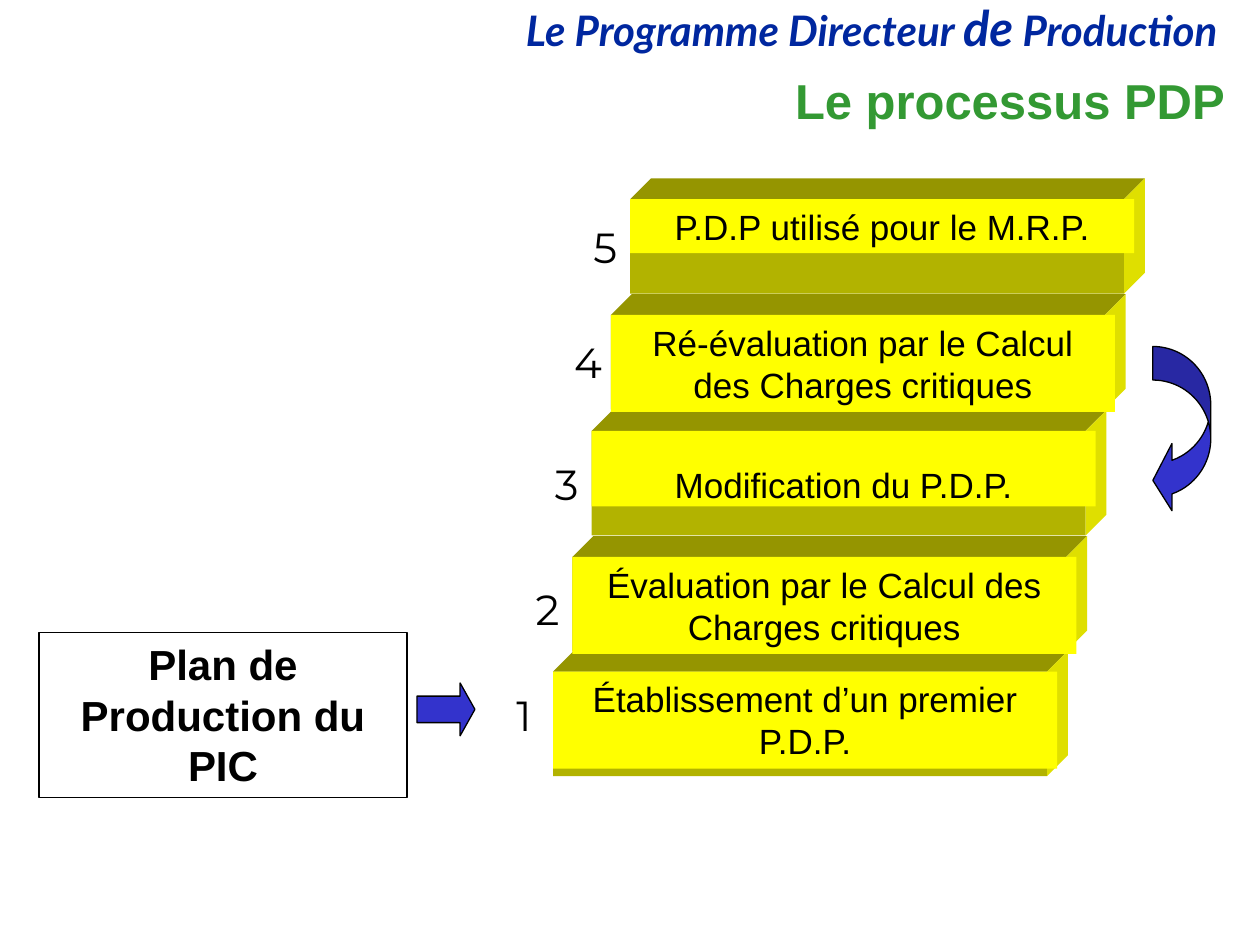
from dataclasses import dataclass

from pptx import Presentation
from pptx.dml.color import RGBColor
from pptx.enum.shapes import MSO_SHAPE
from pptx.enum.text import MSO_ANCHOR, MSO_AUTO_SIZE, PP_ALIGN
from pptx.util import Inches, Pt


@dataclass(frozen=True)
class Theme:
    """Colours, fonts and type sizes of the slide."""
    ink: str = "000000"
    navy: str = "00279F"
    green: str = "339933"
    arrow: str = "3333CC"
    panel: str = "FFFF00"
    front: str = "B2B300"
    top: str = "959500"
    side: str = "DFDF00"
    body_font: str = "Arial"
    header_font: str = "Lato"
    number_font: str = "Montserrat"
    title_size: int = 28
    label_size: int = 24
    step_size: int = 20


THEME = Theme()
COLUMNS, ROWS = 100, 75
WIDTH, HEIGHT = Inches(10), Inches(7.5)
FIRST_COLUMN, STEP_SHIFT = 43.9, 1.53
BLOCK_WIDTH, PANEL_WIDTH, DEPTH = 39.2, 40, 1.65
NUMBER_SHIFT = 3.9

STEPS = [
    ("Établissement d’un premier P.D.P.", 53.3, 8.3, 7.7, 54.2),
    ("Évaluation par le Calcul des Charges critiques", 44.2, 7.5, 7.7, 45.8),
    ("Modification du P.D.P.", 34.2, 8.3, 6, 35.9),
    ("Ré-évaluation par le Calcul des Charges critiques", 25, 7.5, 7.7, 26.2),
    ("P.D.P utilisé pour le M.R.P.", 15.8, 7.5, 4.3, 17.1),
]


def grid(column, row):
    """Turn a grid position into slide lengths."""
    return round(column * WIDTH / COLUMNS), round(row * HEIGHT / ROWS)


def area(column, row, columns, rows):
    """Turn a grid area into left, top, width and height."""
    return *grid(column, row), *grid(columns, rows)


def paint(shape, fill=None, line=None):
    """Set the fill and outline of a shape and drop its shadow."""
    shape.shadow.inherit = False
    if fill:
        shape.fill.solid()
        shape.fill.fore_color.rgb = RGBColor.from_string(fill)
    else:
        shape.fill.background()
    if line:
        shape.line.color.rgb = RGBColor.from_string(line)
        shape.line.width = Pt(0.75)
    else:
        shape.line.fill.background()


def add_shape(page, kind, place, fill=None, line=None, adjustments=()):
    """Add a painted preset shape."""
    shape = page.shapes.add_shape(kind, *area(*place))
    paint(shape, fill, line)
    for index, value in enumerate(adjustments):
        shape.adjustments[index] = value
    return shape


def add_face(page, corners, fill):
    """Add a closed polygon through grid corners."""
    first, *others = [grid(*corner) for corner in corners]
    builder = page.shapes.build_freeform(*first, scale=1.0)
    builder.add_line_segments(others, close=True)
    paint(builder.convert_to_shape(), fill)


def write(box, spans, font, color, align=PP_ALIGN.CENTER, anchor=MSO_ANCHOR.TOP,
          bold=None, italic=None, spacing=None):
    """Write one paragraph of (text, size) spans into a shape."""
    frame = box.text_frame
    frame.word_wrap = True
    frame.auto_size = MSO_AUTO_SIZE.NONE
    frame.vertical_anchor = anchor
    para = frame.paragraphs[0]
    para.alignment = align
    if spacing:
        para.line_spacing = spacing
    for text, size in spans:
        span = para.add_run()
        span.text = text
        span.font.name = font
        span.font.size = Pt(size)
        span.font.bold = bold
        span.font.italic = italic
        span.font.color.rgb = RGBColor.from_string(color)


def add_block(page, column, row, rows):
    """Add a solid block with a front, a top and a right side."""
    right, bottom = column + BLOCK_WIDTH, row + rows
    back_right, back_row = right + DEPTH, row - DEPTH
    add_shape(page, MSO_SHAPE.RECTANGLE, (column, row, BLOCK_WIDTH, rows), THEME.front)
    add_face(page, [(column, row), (column + DEPTH, back_row),
                    (back_right, back_row), (right, row)], THEME.top)
    add_face(page, [(right, row), (back_right, back_row),
                    (back_right, bottom - DEPTH), (right, bottom)], THEME.side)


def add_step(page, index, text, row, block_rows, panel_rows, number_row):
    """Add one numbered step of the staircase."""
    column = FIRST_COLUMN + index * STEP_SHIFT
    add_block(page, column, row, block_rows)
    panel = add_shape(page, MSO_SHAPE.RECTANGLE,
                      (column, row, PANEL_WIDTH, panel_rows), THEME.panel)
    low = panel_rows == 6
    write(panel, [(text, THEME.step_size)], THEME.body_font, THEME.ink,
          anchor=MSO_ANCHOR.BOTTOM if low else MSO_ANCHOR.TOP)
    if low:
        panel.text_frame.margin_bottom = Inches(0.01)
    number = page.shapes.add_textbox(*area(column - NUMBER_SHIFT, number_row, 4.6, 5))
    write(number, [(str(index + 1), THEME.label_size)], THEME.number_font,
          THEME.ink, PP_ALIGN.LEFT)


def add_headings(page):
    """Add the course heading and the slide title."""
    header = page.shapes.add_textbox(*area(16.8, -0.2, 80.8, 5.2))
    write(header, [("Le Programme Directeur ", THEME.label_size),
                   ("de", THEME.title_size),
                   (" Production", THEME.label_size)],
          THEME.header_font, THEME.navy, PP_ALIGN.RIGHT,
          bold=True, italic=True, spacing=0.9)
    title = page.shapes.title
    title.left, title.top, title.width, title.height = area(1.5, 5, 96.7, 5.8)
    write(title, [("Le processus PDP", THEME.title_size)], THEME.body_font,
          THEME.green, PP_ALIGN.RIGHT, MSO_ANCHOR.MIDDLE, bold=True)


def main():
    """Build and save the slide."""
    deck = Presentation()
    deck.slide_width, deck.slide_height = WIDTH, HEIGHT
    page = deck.slides.add_slide(deck.slide_layouts[5])
    add_headings(page)
    plan = add_shape(page, MSO_SHAPE.RECTANGLE, (3.1, 50.2, 29.2, 13.1), line=THEME.ink)
    write(plan, [("Plan de Production du PIC", THEME.label_size)],
          THEME.body_font, THEME.ink, bold=True)
    add_shape(page, MSO_SHAPE.RIGHT_ARROW, (33.1, 54.2, 4.6, 4.2),
              THEME.arrow, THEME.ink, (0.5, 0.28))
    for index, step in enumerate(STEPS):
        add_step(page, index, *step)
    add_shape(page, MSO_SHAPE.CURVED_LEFT_ARROW, (91.5, 27.5, 4.6, 13.3),
              THEME.arrow, THEME.ink, (0.58, 1.16, 0.33))
    deck.save("out.pptx")


if __name__ == "__main__":
    main()
